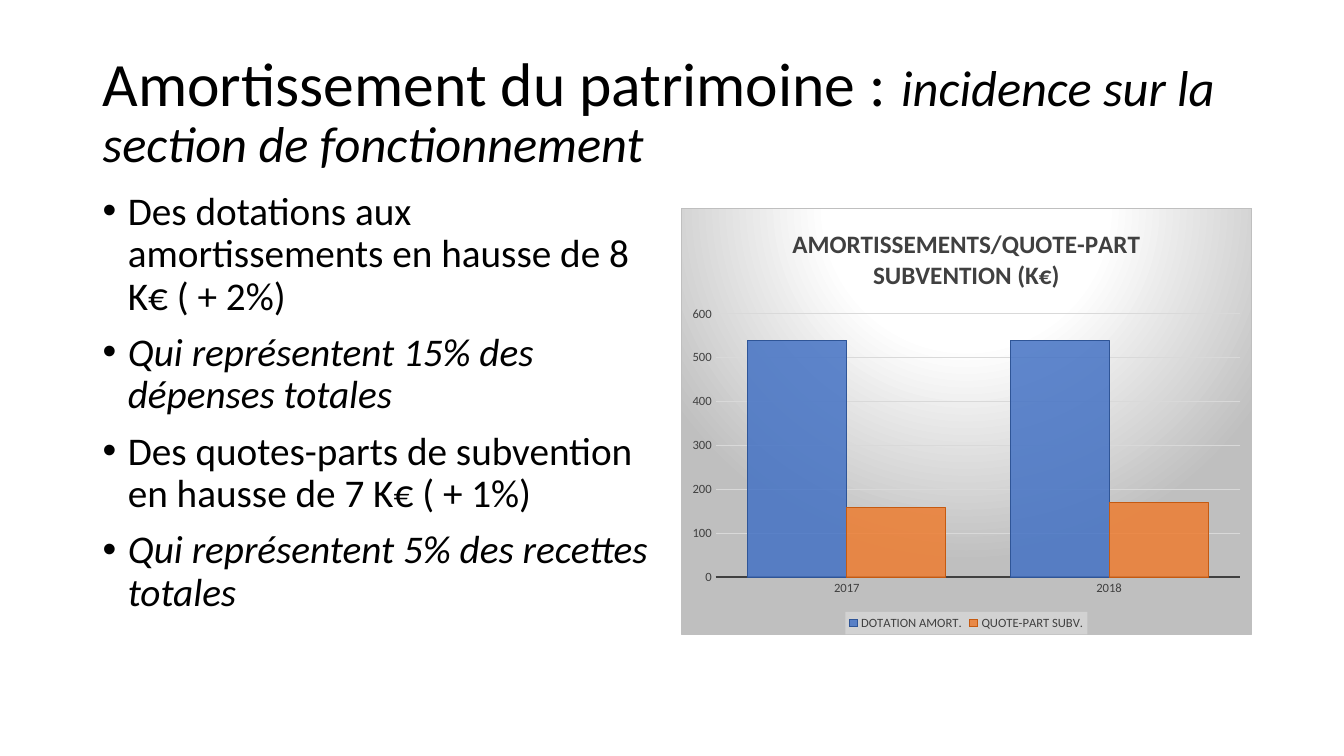
from lxml import etree
from pptx import Presentation
from pptx import util as u
from pptx.chart.data import CategoryChartData
from pptx.dml.color import RGBColor
from pptx.enum import chart as ch, text as tx
from pptx.oxml import parse_xml
from pptx.oxml.ns import nsdecls, qn

W, H = 13.33, 7.5
LEFT, COL, GAP = 0.92, 5.67, 0.16
FONT = "Calibri"
HUES = {"ink": "000000", "soft": "404040", "grid": "D9D9D9", "edge": "BFBFBF",
        "pale": "F2F2F2", "white": "FFFFFF", "blue": "4472C4", "navy": "2F5597",
        "gold": "ED7D31", "rust": "C55A11"}
POINTS = [
    ("Des dotations aux amortissements en hausse de 8 K€ ( + 2%)", False),
    ("Qui représentent 15% des dépenses totales", True),
    ("Des quotes-parts de subvention en hausse de 7 K€ ( + 1%)", False),
    ("Qui représentent 5% des recettes totales", True),
]
SERIES = [("DOTATION AMORT.", (540, 540), "blue", "navy"),
          ("QUOTE-PART SUBV.", (160, 170), "gold", "rust")]


def hue(name):
    return RGBColor.from_string(HUES[name])


def style(font, size, color="ink", bold=False, italic=False):
    font.name, font.size = FONT, u.Pt(size)
    font.bold, font.italic = bold, italic
    font.color.rgb = hue(color)


def write(para, words, **form):
    run = para.add_run()
    run.text = words
    style(run.font, **form)


def stroke(line, color, width=0.75):
    line.color.rgb = hue(color)
    line.width = u.Pt(width)


def fade(fill, color, alpha):
    fill.solid()
    fill.fore_color.rgb = hue(color)
    tint = fill._xPr.find(".//" + qn("a:srgbClr"))
    etree.SubElement(tint, qn("a:alpha")).set("val", str(alpha * 1000))


def frame(slide, box, anchor):
    area = slide.shapes.add_textbox(*map(u.Inches, box)).text_frame
    area.word_wrap = True
    area.vertical_anchor = anchor
    return area


def title(slide, box):
    para = frame(slide, box, tx.MSO_ANCHOR.MIDDLE).paragraphs[0]
    para.line_spacing = 0.9
    write(para, "Amortissement du patrimoine : ", size=44)
    write(para, "incidence sur la section de fonctionnement", size=36, italic=True)


def bullets(slide, box):
    area = frame(slide, box, tx.MSO_ANCHOR.TOP)
    for i, (words, slant) in enumerate(POINTS):
        para = area.add_paragraph() if i else area.paragraphs[0]
        para.line_spacing, para.space_before = 0.9, u.Pt(10)
        props = para._p.get_or_add_pPr()
        props.set("marL", str(u.Inches(0.25)))
        props.set("indent", str(u.Inches(-0.25)))
        etree.SubElement(props, qn("a:buFont")).set("typeface", "Arial")
        etree.SubElement(props, qn("a:buChar")).set("char", "•")
        write(para, words, size=28, italic=slant)


def backdrop(chart):
    """Radial gradient and thin border behind the whole chart."""
    stops = "".join(
        f'<a:gs pos="{pos * 1000}"><a:srgbClr val="{HUES[name]}"/></a:gs>'
        for pos, name in ((0, "white"), (39, "white"), (100, "edge")))
    props = parse_xml(
        f'<c:spPr {nsdecls("c", "a")}><a:gradFill><a:gsLst>{stops}</a:gsLst>'
        '<a:path path="circle"><a:fillToRect l="50000" t="-80000" r="50000" b="180000"/>'
        f'</a:path></a:gradFill><a:ln w="{u.Pt(0.75)}"><a:solidFill>'
        f'<a:srgbClr val="{HUES["edge"]}"/></a:solidFill></a:ln></c:spPr>')
    chart._chartSpace.find(qn("c:chart")).addnext(props)


def columns(slide, box):
    data = CategoryChartData()
    data.categories = ["2017", "2018"]
    for name, vals, *_ in SERIES:
        data.add_series(name, vals)
    chart = slide.shapes.add_chart(
        ch.XL_CHART_TYPE.COLUMN_CLUSTERED, *map(u.Inches, box), data).chart
    style(chart.font, 10)
    backdrop(chart)

    # Heading
    chart.has_title = True
    write(chart.chart_title.text_frame.paragraphs[0],
          "AMORTISSEMENTS/QUOTE-PART SUBVENTION (K€)",
          size=18, color="soft", bold=True)
    chart.chart_title.include_in_layout = False

    # Bars
    plot = chart.plots[0]
    plot.gap_width, plot.overlap, plot.vary_by_categories = 65, 0, False
    for bar, (_, _, fill, edge) in zip(plot.series, SERIES):
        fade(bar.format.fill, fill, 85)
        stroke(bar.format.line, edge)

    # Axes
    cat, val = chart.category_axis, chart.value_axis
    for axis in (cat, val):
        axis.major_tick_mark = axis.minor_tick_mark = ch.XL_TICK_MARK.NONE
        style(axis.tick_labels.font, 9, "soft")
    stroke(cat.format.line, "soft", 1.5)
    val.format.line.fill.background()
    val.minimum_scale, val.maximum_scale, val.major_unit = 0, 600, 100
    stroke(val.major_gridlines.format.line, "grid")

    # Legend
    chart.has_legend = True
    key = chart.legend
    key.position = ch.XL_LEGEND_POSITION.BOTTOM
    key.include_in_layout = False
    style(key.font, 9, "soft")
    props = parse_xml(f'<c:spPr {nsdecls("c", "a")}><a:solidFill>'
                      f'<a:srgbClr val="{HUES["pale"]}"><a:alpha val="39000"/>'
                      '</a:srgbClr></a:solidFill></c:spPr>')
    key._element.find(qn("c:txPr")).addprevious(props)


def main():
    deck = Presentation()
    deck.slide_width, deck.slide_height = u.Inches(W), u.Inches(H)
    slide = deck.slides.add_slide(deck.slide_layouts[6])
    title(slide, (LEFT, 0.4, 2 * COL + GAP, 1.45))
    bullets(slide, (LEFT, 1.85, COL, 4.91))
    columns(slide, (LEFT + COL + GAP, 2.06, COL, 4.24))
    deck.save("out.pptx")


if __name__ == "__main__":
    main()
